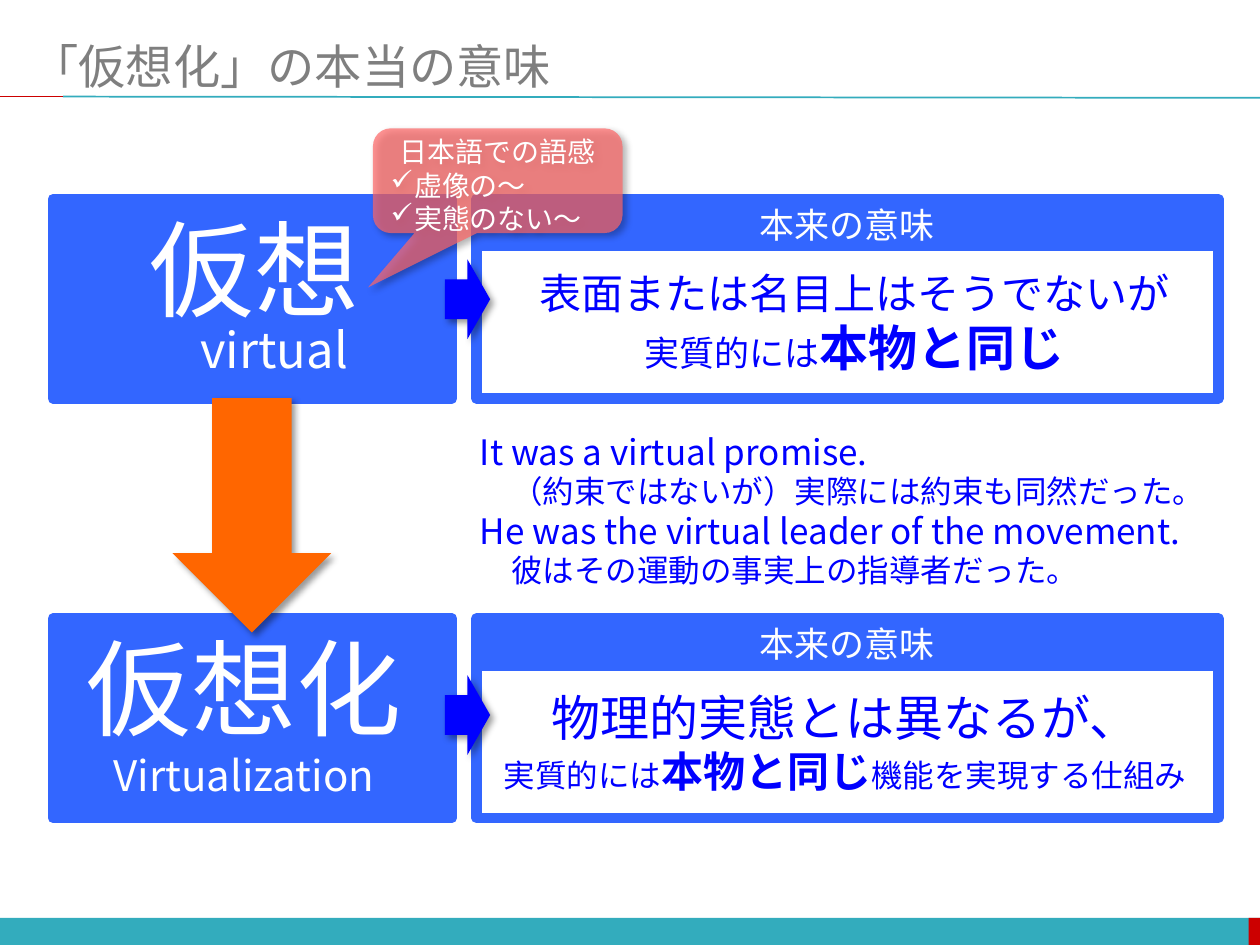
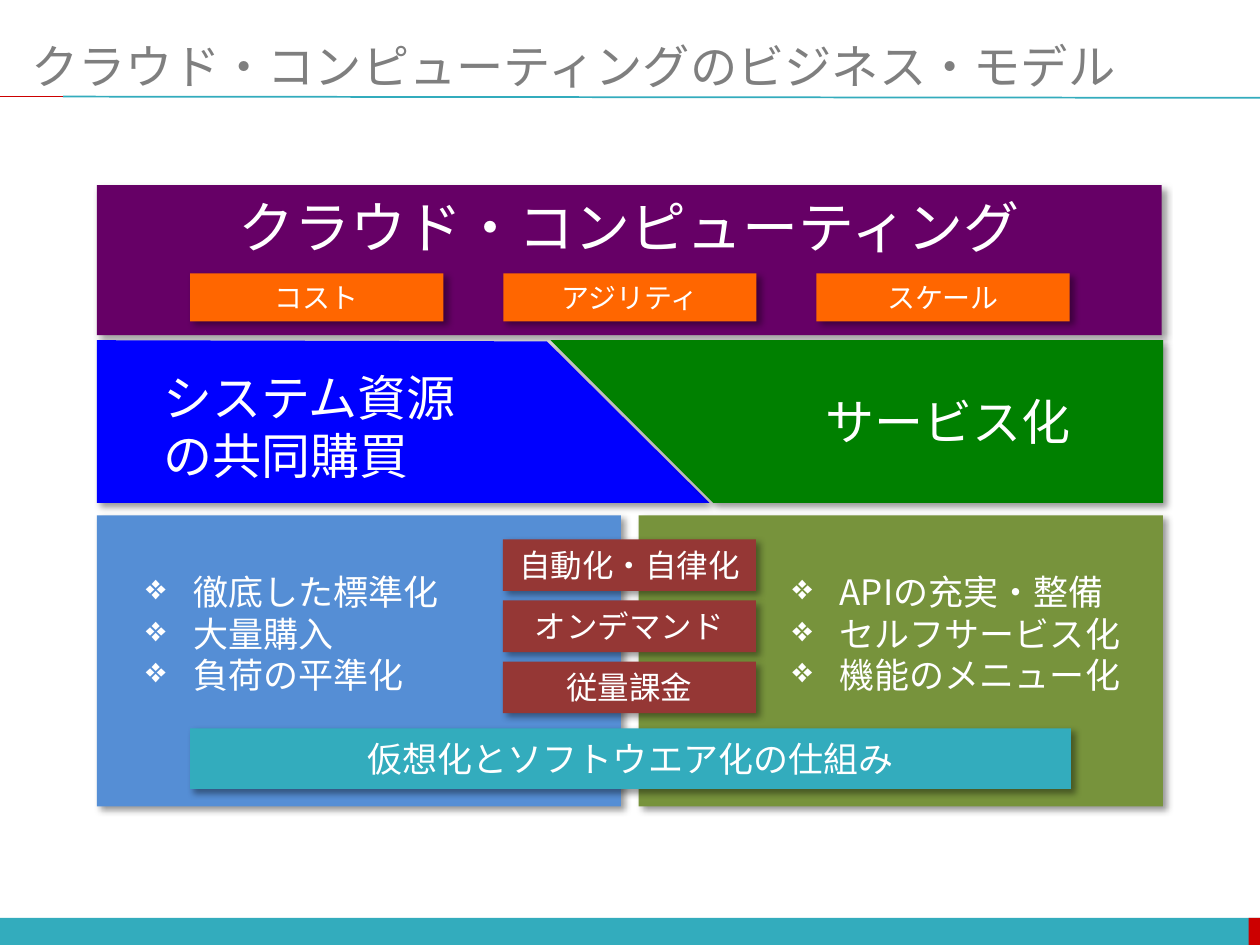
from lxml.etree import SubElement
from pptx import Presentation
from pptx.dml.color import RGBColor
from pptx.enum.shapes import MSO_CONNECTOR, MSO_SHAPE
from pptx.enum.text import MSO_ANCHOR, PP_ALIGN
from pptx.oxml.ns import qn
from pptx.util import Pt

FONT = "Noto Sans CJK JP"
PITCH = 1.19  # line height as a multiple of the text size
COLORS = {
    "white": "FFFFFF", "gray": "7F7F7F", "teal": "33ACBD", "red": "CC0000",
    "azure": "3366FF", "blue": "0000FF", "orange": "FF6600", "pink": "FF6666",
    "purple": "660066", "green": "008000", "sky": "558ED5", "olive": "77933C",
    "brick": "953735", "black": "000000",
}
ALIGN = {"left": PP_ALIGN.LEFT, "center": PP_ALIGN.CENTER, "right": PP_ALIGN.RIGHT}


def rgb(name):
    return RGBColor.from_string(COLORS[name])


# Text
def write(shape, lines, size=20, color="white", align="center", middle=False,
          bullet=None, hang=0, inset=(7.2, 3.6, 7.2, 3.6)):
    """Each line is a string or a list of (text, size, bold) runs."""
    frame = shape.text_frame
    frame.word_wrap = True
    frame.vertical_anchor = MSO_ANCHOR.MIDDLE if middle else MSO_ANCHOR.TOP
    (frame.margin_left, frame.margin_top,
     frame.margin_right, frame.margin_bottom) = map(Pt, inset)
    for index, line in enumerate(lines):
        para = frame.paragraphs[0] if index == 0 else frame.add_paragraph()
        runs = [(line, size, False)] if isinstance(line, str) else line
        para.alignment = ALIGN[align]
        para.line_spacing = Pt(PITCH * max(run[1] for run in runs))
        if bullet:
            mark(para, bullet, hang)
        for words, points, bold in runs:
            run = para.add_run()
            run.text = words
            font = run.font
            font.size, font.bold, font.name = Pt(points), bold, FONT
            font.color.rgb = rgb(color)
            SubElement(run._r.get_or_add_rPr(), qn("a:ea"), typeface=FONT)
    return shape


def mark(para, char, hang):
    shift(para, hang, -hang)
    SubElement(para._p.get_or_add_pPr(), qn("a:buChar"), char=char)


def shift(para, left, first=0):
    props = para._p.get_or_add_pPr()
    props.set("marL", str(Pt(left)))
    props.set("indent", str(Pt(first)))


def label(slide, box, lines, **style):
    return write(slide.shapes.add_textbox(*map(Pt, box)), lines, **style)


# Shapes
def paint(shape, fill, edge=None, width=0, shade=False):
    shape.shadow.inherit = False
    shape.fill.solid()
    shape.fill.fore_color.rgb = rgb(fill)
    if edge:
        shape.line.color.rgb = rgb(edge)
        shape.line.width = Pt(width)
    else:
        shape.line.fill.background()
    if shade:
        effect = shape._element.spPr.find(qn("a:effectLst"))
        outer = SubElement(effect, qn("a:outerShdw"), blurRad=str(Pt(4)),
                           dist=str(Pt(3)), dir="2700000", algn="tl", rotWithShape="0")
        tint = SubElement(outer, qn("a:srgbClr"), val=COLORS["black"])
        SubElement(tint, qn("a:alpha"), val="40000")
    return shape


def block(slide, box, fill, kind=MSO_SHAPE.RECTANGLE, **look):
    return paint(slide.shapes.add_shape(kind, *map(Pt, box)), fill, **look)


def chip(slide, box, fill, words, size):
    write(block(slide, box, fill, shade=True), [words], size=size, middle=True)


def shard(slide, points, fill):
    (x, y), *rest = [(Pt(x), Pt(y)) for x, y in points]
    pen = slide.shapes.build_freeform(x, y)
    pen.add_line_segments(rest, close=True)
    paint(pen.convert_to_shape(), fill, shade=True)


def rule(slide, ends, color):
    line = slide.shapes.add_connector(MSO_CONNECTOR.STRAIGHT, *map(Pt, ends))
    line.line.color.rgb = rgb(color)
    line.line.width = Pt(1)
    SubElement(line._element.spPr, qn("a:effectLst"))


# Title, rules and footer band shared by both slides
def start(deck, title):
    slide = deck.slides.add_slide(deck.slide_layouts[6])
    block(slide, (0, 524.5, 720, 15.5), "teal")
    block(slide, (713.5, 524.5, 6.5, 15.5), "red")
    rule(slide, (36, 55.2, 720, 55.9), "teal")
    rule(slide, (0, 55.2, 36, 55.2), "red")
    label(slide, (18, 20.9, 684, 33.1), [title], size=27, color="gray",
          align="left", middle=True, inset=(0, 3.6, 0, 3.6))
    return slide


# A term panel on the left and its meaning panel on the right
def pair(slide, top, point, box, lines):
    block(slide, (30.2, top, 228.2, 113.8), "azure", edge="azure", width=6)
    block(slide, (272.2, top, 424.1, 113.8), "white", edge="azure", width=6)
    head = block(slide, (272.2, top, 424.1, 28.8), "azure", edge="azure", width=2)
    write(head, ["本来の意味"], middle=True)
    label(slide, box, lines, color="blue")
    block(slide, (254.2, point, 25.9, 45.4), "blue", MSO_SHAPE.RIGHT_ARROW, shade=True)


def virtual(deck):
    slide = start(deck, "「仮想化」の本当の意味")
    pair(slide, 113.8, 148.3, (280, 149.8, 416.2, 70.6), [
        [("表面または名目上はそうでないが", 24, False)],
        [("実質的には", 20, False), ("本物と同じ", 28, True)]])
    label(slide, (77.8, 113.8, 135.4, 79.9), ["仮想"], size=60)
    label(slide, (104.4, 179.3, 101.5, 41), ["virtual"], size=28, align="right")

    pair(slide, 353.5, 385.9, (275.8, 389.5, 414, 70.6), [
        [("物理的実態とは異なるが、", 28, False)],
        [("実質的には", 18, False), ("本物と同じ", 24, True),
         ("機能を実現する仕組み", 18, False)]])
    label(slide, (41, 353.5, 196.6, 111.6),
          ["仮想化", [("Virtualization", 24, False)]], size=60)
    block(slide, (98.6, 227.5, 90.7, 133.9), "orange", MSO_SHAPE.DOWN_ARROW, shade=True)

    # Translucent callout
    note = block(slide, (213.1, 73.4, 142.6, 59.8), "pink",
                 MSO_SHAPE.ROUNDED_RECTANGULAR_CALLOUT, shade=True)
    for index, value in enumerate((-0.52, 1.02, 0.17)):
        note.adjustments[index] = value
    tint = note._element.spPr.find(qn("a:solidFill"))[0]
    SubElement(tint, qn("a:alpha"), val="70000")
    write(note, ["日本語での語感", "虚像の〜", "実態のない〜"], size=16,
          align="left", middle=True, inset=(7.2, 8.6, 7.2, 3.6))
    head, *items = note.text_frame.paragraphs
    head.alignment = PP_ALIGN.CENTER
    for item in items:
        mark(item, "✓", 13.5)

    # Example sentences, each with an indented translation
    talk = label(slide, (267.1, 242.6, 441.4, 99.4), [
        "It was a virtual promise.",
        [("（約束ではないが）実際には約束も同然だった。", 18, False)],
        "He was the virtual leader of the movement.",
        [("彼はその運動の事実上の指導者だった。", 18, False)]],
        color="blue", align="left")
    for para in talk.text_frame.paragraphs[1::2]:
        shift(para, 18)


def cloud(deck):
    slide = start(deck, "クラウド・コンピューティングのビジネス・モデル")

    # Lower panels with bullet lists
    panels = [
        (55.4, "sky", 76.3, ["徹底した標準化", "大量購入", "負荷の平準化"]),
        (365, "olive", 445.7, ["APIの充実・整備", "セルフサービス化", "機能のメニュー化"]),
    ]
    for left, fill, inner, items in panels:
        block(slide, (left, 294.5, 299.5, 166.3), fill, shade=True)
        label(slide, (inner, 322.6, 204, 79.9), items, align="left",
              bullet="❖", hang=27)

    # Top banner with its three values
    top = block(slide, (55.4, 105.8, 608.4, 85.7), "purple", shade=True)
    write(top, ["クラウド・コンピューティング"], size=32, inset=(7.2, 4.8, 7.2, 3.6))
    for index, words in enumerate(("コスト", "アジリティ", "スケール")):
        chip(slide, (108.7 + 178.9 * index, 156.2, 144.7, 27.4), "orange", words, 16)

    # Two interlocking halves
    shard(slide, [(55.4, 194.4), (55.4, 287.3), (405.4, 287.3), (312.5, 195.1)], "blue")
    label(slide, (86.4, 206.6, 186, 74.9), ["システム資源", "の共同購買"],
          size=28, align="left")
    shard(slide, [(664.6, 287.3), (664.6, 194.4), (314.6, 194.4), (407.5, 287.3)], "green")
    label(slide, (463.7, 220.3, 156.2, 41), ["サービス化"], size=28)

    # Shared means across both panels
    for index, words in enumerate(("自動化・自律化", "オンデマンド", "従量課金")):
        chip(slide, (287.3, 308.2 + 34.9 * index, 144.7, 29.5), "brick", words, 18)
    chip(slide, (108.7, 416.2, 503.3, 34.6), "teal", "仮想化とソフトウエア化の仕組み", 20)


def main():
    deck = Presentation()
    deck.slide_width, deck.slide_height = Pt(720), Pt(540)
    virtual(deck)
    cloud(deck)
    deck.save("out.pptx")


if __name__ == "__main__":
    main()
